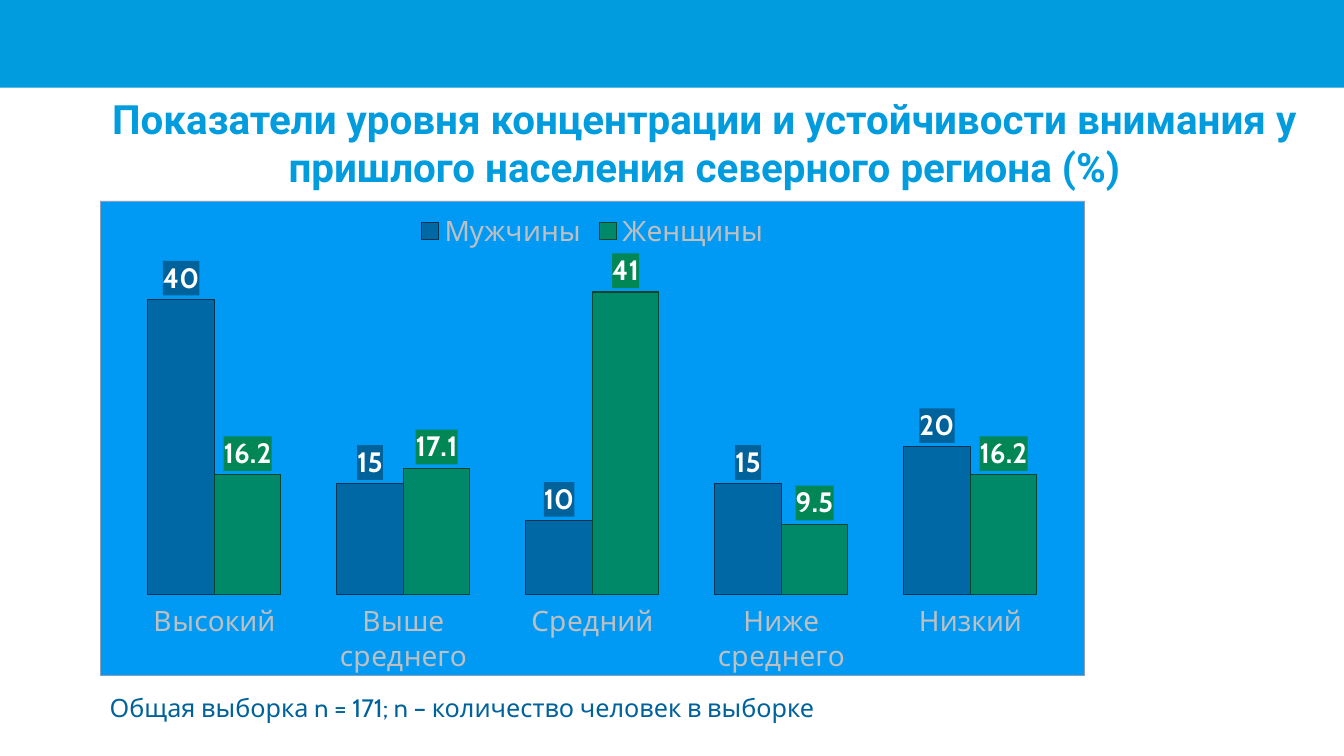
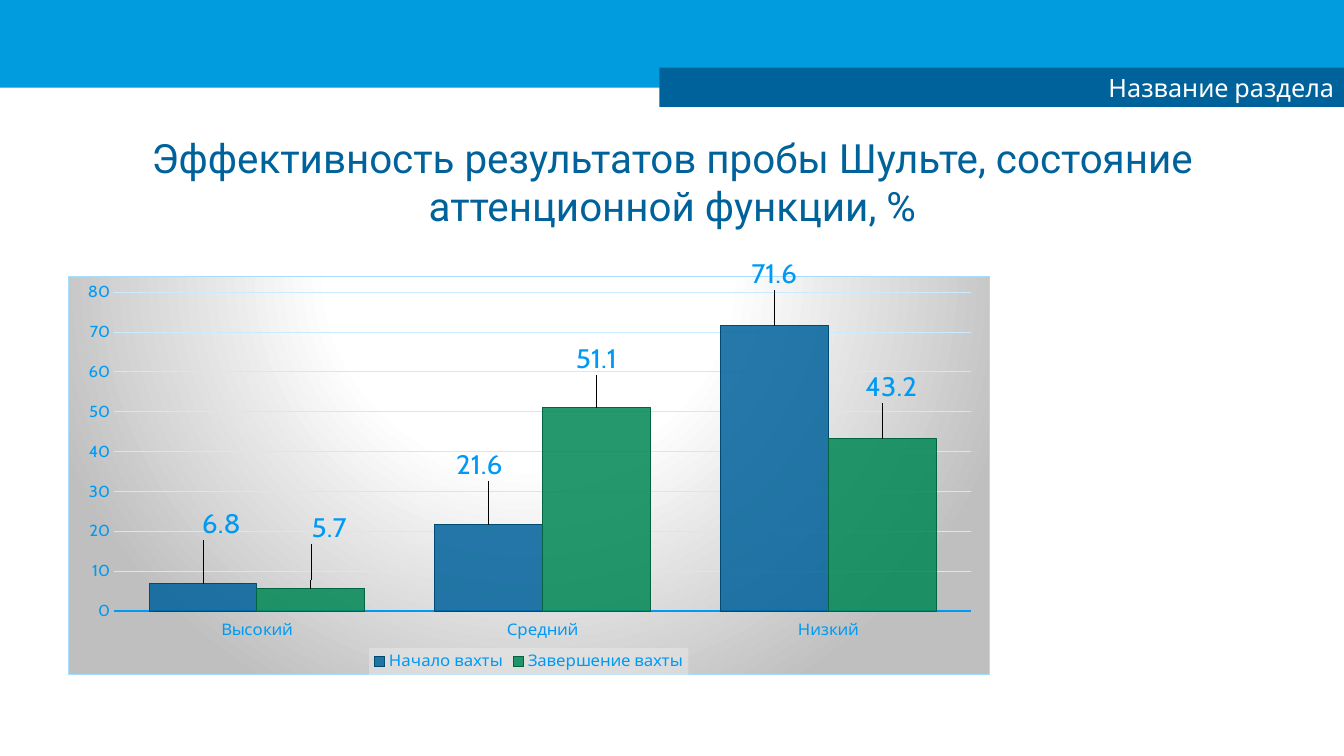
from lxml import etree
from pptx import Presentation
from pptx.chart.data import CategoryChartData
from pptx.dml.color import RGBColor
from pptx.enum.chart import XL_CHART_TYPE as ChartType
from pptx.enum.chart import XL_LABEL_POSITION as LabelPosition
from pptx.enum.chart import XL_LEGEND_POSITION as LegendPosition
from pptx.enum.chart import XL_TICK_LABEL_POSITION as TickLabels
from pptx.enum.chart import XL_TICK_MARK as TickMark
from pptx.enum.shapes import MSO_SHAPE as Shape
from pptx.enum.text import MSO_ANCHOR as Anchor
from pptx.enum.text import PP_ALIGN as Align
from pptx.oxml import parse_xml
from pptx.oxml.ns import nsdecls, qn
from pptx.util import Inches, Pt

WIDTH, HEIGHT = 13.33, 7.5
BAND_HEIGHT = 0.87
TITLE_SIZE = (12, 0.9)
BODY_FONT, TITLE_FONT = "Cabin", "Roboto"
COLORS = {
    "band": "009CDE", "navy": "00629B", "green": "008755",
    "bright": "009AF4", "white": "FFFFFF", "gray": "BFBFBF",
    "grid": "CAEBFF", "pale": "F2F2F2",
}

ATTENTION = {
    "title": "Показатели уровня концентрации и устойчивости внимания у "
             "пришлого населения северного региона (%)",
    "title_at": (0.99, 0.96), "title_color": "band", "title_bold": True,
    "chart_at": (0.99, 1.99, 9.77, 4.71),
    "plot": (0.02, 0.13, 0.96, 0.7),
    "categories": ["Высокий", "Выше среднего", "Средний", "Ниже среднего", "Низкий"],
    "series": [
        ("Мужчины", [40, 15, 10, 15, 20], "navy", "00314E"),
        ("Женщины", [16.2, 17.1, 41, 9.5, 16.2], "green", "00442B"),
    ],
    "gap": 84, "opacity": 88, "maximum": 45, "step": 5,
    "text_size": 20, "text_color": "gray", "label_color": "white",
    "boxed_labels": True, "label_shifts": None, "value_axis": False,
    "legend": LegendPosition.TOP, "legend_fill": None,
    "fill": "solid", "border": ("8C9EBB", 0.5),
}
SCHULTE = {
    "title": "Эффективность результатов пробы Шульте, состояние аттенционной функции, %",
    "title_at": (0.67, 1.35), "title_color": "navy", "title_bold": False,
    "chart_at": (0.67, 2.55, 9.15, 4.15),
    "plot": (0.05, 0.04, 0.93, 0.8),
    "categories": ["Высокий", "Средний", "Низкий"],
    "series": [
        ("Начало вахты", [6.8, 21.6, 71.6], "navy", "004A74"),
        ("Завершение вахты", [5.7, 51.1, 43.2], "green", "006540"),
    ],
    "gap": 65, "opacity": 85, "maximum": 80, "step": 10,
    "text_size": 12, "text_color": "bright", "label_color": "bright",
    "boxed_labels": False, "value_axis": True,
    "label_shifts": [
        [(0.02, -0.1), (-0.01, -0.1), (0, -0.08)],
        [(0.02, -0.1), (0, -0.07), (0.01, -0.08)],
    ],
    "legend": LegendPosition.BOTTOM, "legend_fill": ("pale", 39),
    "fill": "radial", "border": ("A6DEFF", 0.75),
}
CAPTION = "Общая выборка n = 171; n – количество человек в выборке"
SECTION = "Название раздела"


def rgb(name):
    return RGBColor.from_string(COLORS.get(name, name))


def style_font(font, size, color, bold=False, face=BODY_FONT):
    font.size, font.bold, font.name = Pt(size), bold, face
    font.color.rgb = rgb(color)


def write_text(box, text, size=18, color="navy", bold=False, face=BODY_FONT,
               align=Align.LEFT, anchor=Anchor.TOP, wrap=True):
    frame = box.text_frame
    frame.word_wrap, frame.vertical_anchor = wrap, anchor
    para = frame.paragraphs[0]
    para.alignment = align
    span = para.add_run()
    span.text = text
    style_font(span.font, size, color, bold, face)


def add_text(page, at, text, **style):
    write_text(page.shapes.add_textbox(*map(Inches, at)), text, **style)


def add_bar(page, at, color):
    bar = page.shapes.add_shape(Shape.RECTANGLE, *map(Inches, at))
    bar.shadow.inherit = False
    bar.fill.solid()
    bar.fill.fore_color.rgb = rgb(color)
    bar.line.fill.background()
    return bar


def solid_xml(color, opacity=100):
    return (f'<a:solidFill><a:srgbClr val="{COLORS.get(color, color)}">'
            f'<a:alpha val="{opacity * 1000}"/></a:srgbClr></a:solidFill>')


def radial_xml():
    stops = "".join(f'<a:gs pos="{share * 1000}"><a:srgbClr val="{COLORS[color]}"/></a:gs>'
                    for share, color in [(0, "white"), (39, "white"), (100, "gray")])
    return (f'<a:gradFill><a:gsLst>{stops}</a:gsLst><a:path path="circle">'
            '<a:fillToRect l="50000" t="-80000" r="50000" b="180000"/></a:path></a:gradFill>')


def chart_props(fill, border=None):
    line = ""
    if border:
        color, width = border
        line = f'<a:ln w="{Pt(width)}">{solid_xml(color)}</a:ln>'
    return parse_xml(f'<c:spPr {nsdecls("c", "a")}>{fill}{line}</c:spPr>')


def layout_element(names, values, inner=False):
    layout = etree.Element(qn("c:layout"))
    manual = etree.SubElement(layout, qn("c:manualLayout"))
    settings = list(zip(names, values))
    if inner:
        settings = [("layoutTarget", "inner"), ("xMode", "edge"), ("yMode", "edge")] + settings
    for name, value in settings:
        etree.SubElement(manual, qn(f"c:{name}")).set("val", str(value))
    return layout


def place_plot(chart, shares):
    area = chart._chartSpace.find(".//" + qn("c:plotArea"))
    for old in area.findall(qn("c:layout")):
        area.remove(old)
    area.insert(0, layout_element("xywh", shares, inner=True))


def style_axes(chart, content):
    categories, values = chart.category_axis, chart.value_axis
    for axis in (categories, values):
        axis.major_tick_mark = axis.minor_tick_mark = TickMark.NONE
        axis.has_major_gridlines = False
        axis.format.line.fill.background()
        style_font(axis.tick_labels.font, content["text_size"], content["text_color"])
    categories.tick_label_position = TickLabels.LOW
    values.minimum_scale, values.maximum_scale = 0, content["maximum"]
    values.major_unit = content["step"]
    values.visible = content["value_axis"]
    if content["value_axis"]:
        categories.format.line.color.rgb = rgb("bright")
        categories.format.line.width = Pt(1.5)
        values.has_major_gridlines = True
        values.major_gridlines.format.line.color.rgb = rgb("grid")
        values.major_gridlines.format.line.width = Pt(0.75)


def style_series(series, color, outline, content):
    series.format.fill.solid()
    series.format.fill.fore_color.rgb = rgb(color)
    tint = series._element.find(qn("c:spPr")).find(".//" + qn("a:srgbClr"))
    etree.SubElement(tint, qn("a:alpha")).set("val", str(content["opacity"] * 1000))
    series.format.line.color.rgb = rgb(outline)
    series.format.line.width = Pt(0.75)
    series.invert_if_negative = False

    labels = series.data_labels
    labels.show_value = True
    labels.position = LabelPosition.OUTSIDE_END
    style_font(labels.font, 20, content["label_color"], content["boxed_labels"])
    if content["boxed_labels"]:
        labels._element.find(qn("c:txPr")).addprevious(chart_props(solid_xml(color)))


def shift_labels(series, shifts, color):
    for index, shift in enumerate(shifts):
        label = series.points[index].data_label
        style_font(label.font, 20, color)
        label.position = LabelPosition.OUTSIDE_END
    for node, shift in zip(series.data_labels._element.findall(qn("c:dLbl")), shifts):
        node.find(qn("c:idx")).addnext(layout_element("xy", shift))


def style_legend(chart, content):
    chart.has_legend = True
    legend = chart.legend
    legend.position = content["legend"]
    legend.include_in_layout = False
    style_font(legend.font, content["text_size"], content["text_color"])
    if content["legend_fill"]:
        props = chart_props(solid_xml(*content["legend_fill"]))
        legend._element.find(qn("c:txPr")).addprevious(props)


def add_columns(page, content):
    data = CategoryChartData()
    data.categories = content["categories"]
    for name, values, color, outline in content["series"]:
        data.add_series(name, values)
    chart = page.shapes.add_chart(
        ChartType.COLUMN_CLUSTERED, *map(Inches, content["chart_at"]), data).chart
    chart.has_title = False
    style_font(chart.font, content["text_size"], "navy")
    plot = chart.plots[0]
    plot.gap_width, plot.overlap, plot.vary_by_categories = content["gap"], 0, False
    place_plot(chart, content["plot"])
    style_axes(chart, content)
    style_legend(chart, content)
    for index, (name, values, color, outline) in enumerate(content["series"]):
        series = plot.series[index]
        style_series(series, color, outline, content)
        if content["label_shifts"]:
            shift_labels(series, content["label_shifts"][index], content["label_color"])
    fill = radial_xml() if content["fill"] == "radial" else solid_xml("bright")
    chart._chartSpace.find(qn("c:chart")).addnext(chart_props(fill, content["border"]))


def add_page(deck, content):
    page = deck.slides.add_slide(deck.slide_layouts[6])
    add_bar(page, (0, 0, WIDTH, BAND_HEIGHT), "band")
    add_columns(page, content)
    add_text(page, content["title_at"] + TITLE_SIZE, content["title"], size=28.8,
             color=content["title_color"], bold=content["title_bold"], face=TITLE_FONT,
             align=Align.CENTER, anchor=Anchor.MIDDLE)
    return page


def main():
    deck = Presentation()
    deck.slide_width, deck.slide_height = Inches(WIDTH), Inches(HEIGHT)
    attention = add_page(deck, ATTENTION)
    add_text(attention, (0.99, 6.82, 7.24, 0.4), CAPTION, wrap=False)
    schulte = add_page(deck, SCHULTE)
    ribbon = add_bar(schulte, (6.54, 0.67, 6.79, 0.39), "navy")
    write_text(ribbon, SECTION, color="white", align=Align.RIGHT, anchor=Anchor.MIDDLE)
    deck.save("out.pptx")


if __name__ == "__main__":
    main()
